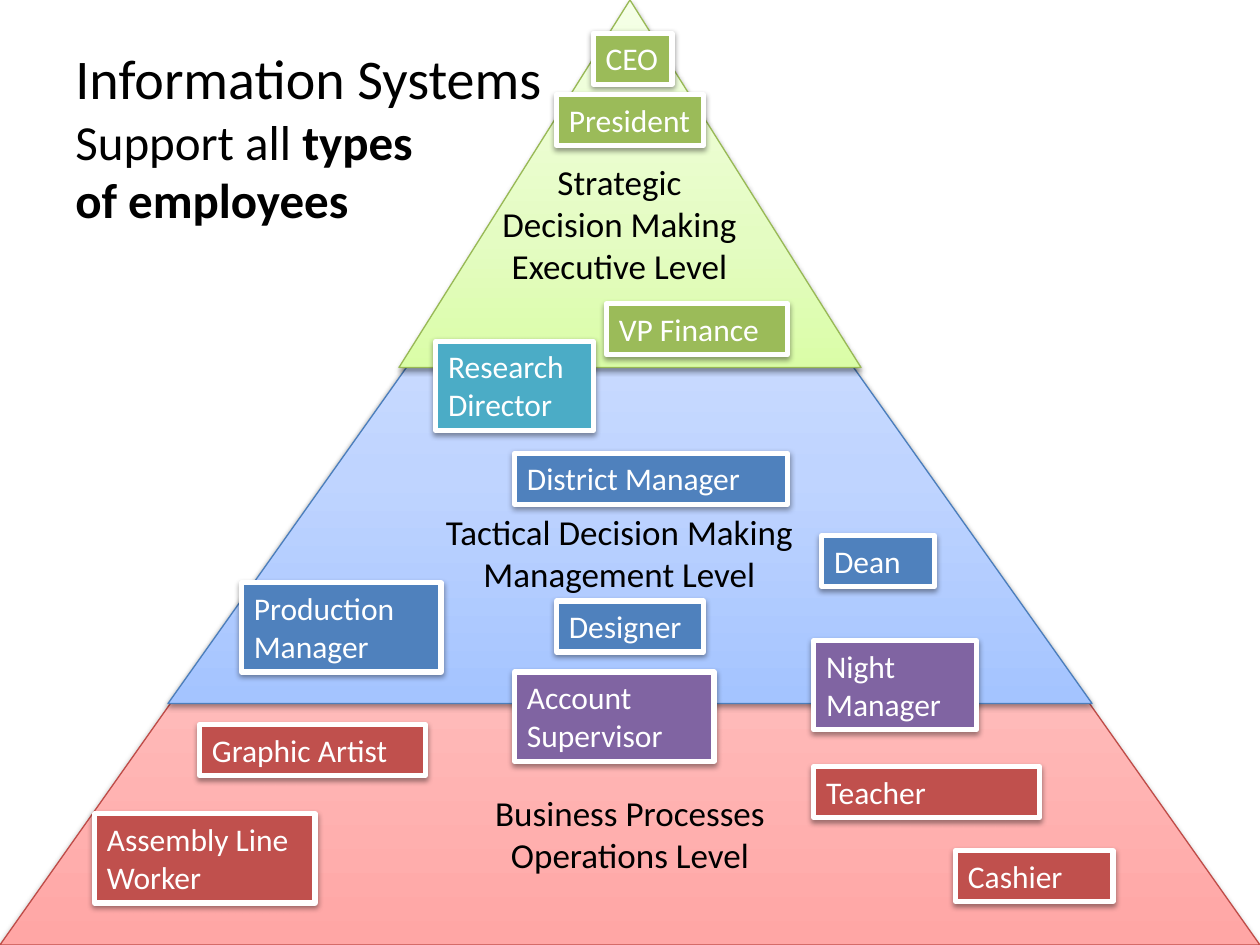
from dataclasses import dataclass

from lxml.etree import SubElement
from pptx import Presentation
from pptx.dml.color import RGBColor
from pptx.enum.shapes import MSO_SHAPE as Preset
from pptx.enum.text import MSO_ANCHOR as Anchor, MSO_AUTO_SIZE as AutoSize, PP_ALIGN as Align
from pptx.oxml.ns import qn
from pptx.util import Pt

COLORS = {
    "black": "000000", "white": "FFFFFF",
    "green": "9BBB59", "teal": "4BACC6", "blue": "4F81BD",
    "purple": "8064A2", "red": "C0504D",
}
# Outline, then gradient stops from the base upwards
LEVEL_COLORS = {
    "operations": ("BF4C48", "FFA6A5", "FFC0BF", "FFE7E7"),
    "management": ("4B7EBC", "A4C4FF", "BFD4FF", "E6EEFF"),
    "executive": ("98B955", "DAFDA7", "E4FCC2", "F5FFE7"),
}
STOP_POSITIONS = (0, 35, 100)
FONT = "Calibri"
LINE_HEIGHT = 21.9
INSET_HEIGHT = 7.2


@dataclass
class Level:
    name: str
    left: float
    top: float
    width: float
    height: float


@dataclass
class Label:
    text: str
    left: float
    top: float
    width: float
    height: float


@dataclass
class Role:
    text: str
    color: str
    left: float
    top: float
    width: float
    lines: int = 1


LEVELS = [
    Level("operations", 0, 30, 720, 510),
    Level("management", 96, 30, 528, 372),
    Level("executive", 228, 0, 264, 210),
]
LABELS = [
    Label("Business Processes\vOperations Level", 96, 448.5, 528, 55.7),
    Label("Tactical Decision Making\nManagement Level", 177, 288, 354, 55.7),
    Label("Strategic\nDecision Making\nExecutive Level", 177, 88, 354, 80),
]
ROLES = [
    Role("Graphic Artist", "red", 114, 414, 129),
    Role("Night Manager", "purple", 465, 366, 93, 2),
    Role("District Manager", "blue", 294, 259, 156),
    Role("CEO", "green", 339, 19, 45),
    Role("VP Finance", "green", 346.5, 173.5, 103.5),
    Role("Assembly Line Worker", "red", 54, 465, 126, 2),
    Role("Production Manager", "blue", 138, 333, 114, 2),
    Role("Account Supervisor", "purple", 294, 384, 114, 2),
    Role("President", "green", 318, 54, 84),
    Role("Research\nDirector", "teal", 249, 195, 90, 2),
    Role("Cashier", "red", 546, 486, 90),
    Role("Teacher", "red", 465, 438, 129),
    Role("Dean", "blue", 469.5, 306, 64.5),
    Role("Designer", "blue", 318, 343.5, 84),
]


def rgb(name: str) -> RGBColor:
    return RGBColor.from_string(COLORS[name])


def add_shadow(shape) -> None:
    shape.shadow.inherit = False
    effects = shape._element.spPr.find(qn("a:effectLst"))
    shadow = SubElement(effects, qn("a:outerShdw"), blurRad=str(Pt(3.15)),
                        dist=str(Pt(1.57)), dir="5400000", rotWithShape="0")
    color = SubElement(shadow, qn("a:srgbClr"), val=COLORS["black"])
    SubElement(color, qn("a:alpha"), val="38000")


def fill_gradient(shape, colors: tuple) -> None:
    shape.fill.gradient()
    shape.fill.gradient_angle = 90
    stops = shape._element.spPr.find(qn("a:gradFill")).find(qn("a:gsLst"))
    for stop in list(stops):
        stops.remove(stop)
    for position, color in zip(STOP_POSITIONS, colors):
        stop = SubElement(stops, qn("a:gs"), pos=str(position * 1000))
        SubElement(stop, qn("a:srgbClr"), val=color)


def style_text(frame, size: float, color: str, align: Align) -> None:
    frame.word_wrap = True
    for paragraph in frame.paragraphs:
        paragraph.alignment = align
        paragraph.font.name = FONT
        paragraph.font.size = Pt(size)
        paragraph.font.color.rgb = rgb(color)


def add_level(slide, level: Level) -> None:
    outline, *stops = LEVEL_COLORS[level.name]
    shape = slide.shapes.add_shape(Preset.ISOSCELES_TRIANGLE, Pt(level.left), Pt(level.top),
                                   Pt(level.width), Pt(level.height))
    fill_gradient(shape, tuple(stops))
    shape.line.color.rgb = RGBColor.from_string(outline)
    shape.line.width = Pt(0.75)
    add_shadow(shape)


def add_label(slide, label: Label) -> None:
    box = slide.shapes.add_textbox(Pt(label.left), Pt(label.top), Pt(label.width), Pt(label.height))
    box.text_frame.text = label.text
    box.text_frame.auto_size = AutoSize.SHAPE_TO_FIT_TEXT
    style_text(box.text_frame, 20, "black", Align.CENTER)


def add_title(slide) -> None:
    box = slide.shapes.add_textbox(Pt(36), Pt(21.5), Pt(330), Pt(248.5))
    frame = box.text_frame
    frame.vertical_anchor = Anchor.TOP
    paragraph = frame.paragraphs[0]
    paragraph.add_run().text = "Information Systems"
    paragraph.add_line_break()
    for text, bold in (("Support all ", False), ("types", True)):
        run = paragraph.add_run()
        run.text, run.font.size, run.font.bold = text, Pt(28), bold
    paragraph.add_line_break()
    run = paragraph.add_run()
    run.text, run.font.size, run.font.bold = "of employees", Pt(28), True
    style_text(frame, 32, "black", Align.LEFT)


def add_role(slide, role: Role) -> None:
    height = role.lines * LINE_HEIGHT + INSET_HEIGHT
    shape = slide.shapes.add_shape(Preset.RECTANGLE, Pt(role.left), Pt(role.top),
                                   Pt(role.width), Pt(height))
    shape.fill.solid()
    shape.fill.fore_color.rgb = rgb(role.color)
    shape.line.color.rgb = rgb("white")
    shape.line.width = Pt(3)
    add_shadow(shape)
    frame = shape.text_frame
    frame.text = role.text
    frame.vertical_anchor = Anchor.TOP
    frame.auto_size = AutoSize.SHAPE_TO_FIT_TEXT
    style_text(frame, 18, "white", Align.LEFT)


def main() -> None:
    presentation = Presentation()
    presentation.slide_width, presentation.slide_height = Pt(720), Pt(540)
    slide = presentation.slides.add_slide(presentation.slide_layouts[6])

    # Pyramid, widest level at the back
    for level in LEVELS:
        add_level(slide, level)

    # Level names and title
    for label in LABELS:
        add_label(slide, label)
    add_title(slide)

    # Job titles
    for role in ROLES:
        add_role(slide, role)

    presentation.save("out.pptx")


if __name__ == "__main__":
    main()
